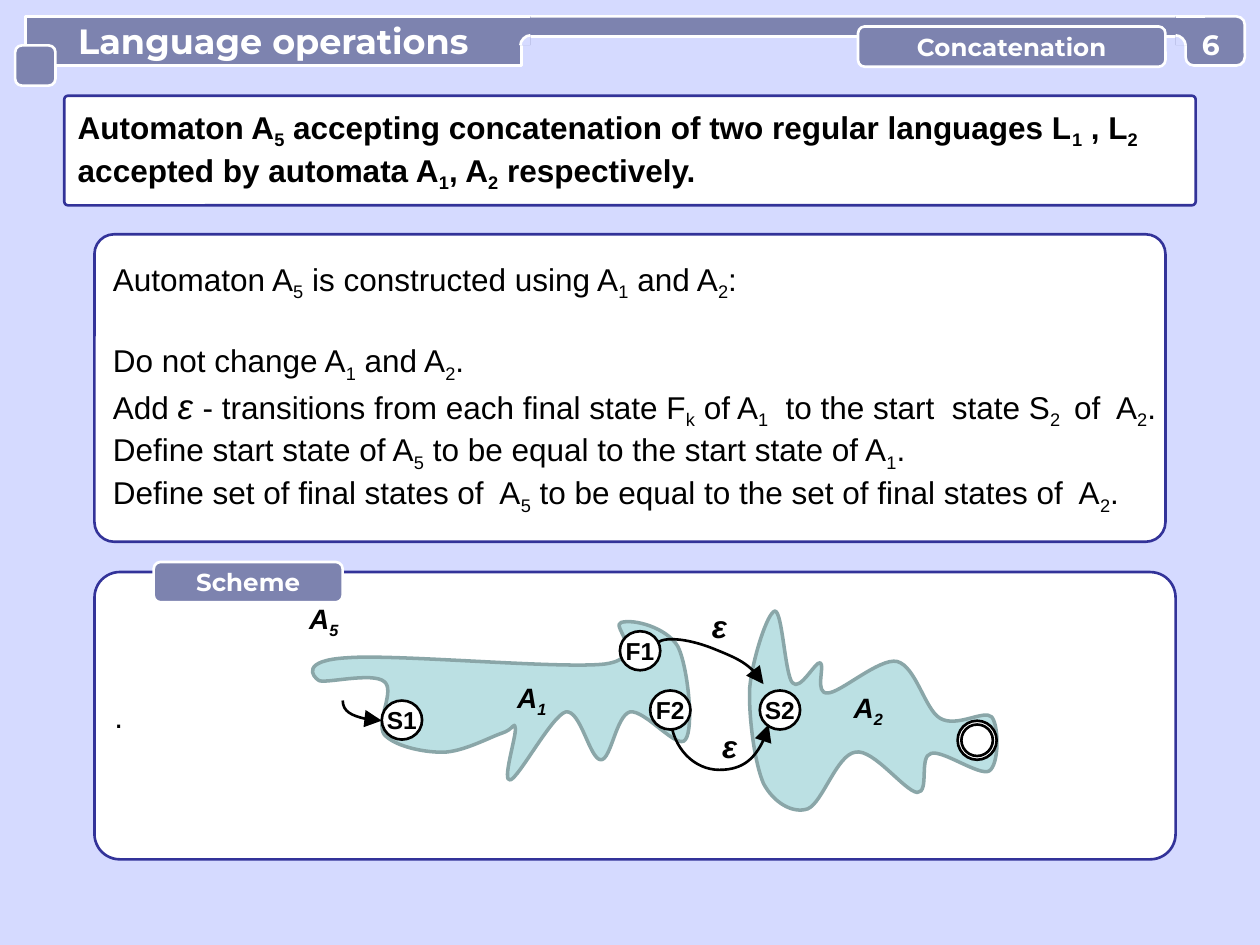
"""Builds a slide on the automaton that accepts a concatenation of two languages."""
from copy import deepcopy
from lxml import etree
from pptx import Presentation
from pptx.dml.color import RGBColor
from pptx.enum.shapes import MSO_CONNECTOR, MSO_SHAPE
from pptx.enum.text import MSO_ANCHOR, MSO_AUTO_SIZE, PP_ALIGN
from pptx.oxml.ns import qn
from pptx.util import Inches, Pt

RECTANGLE, ROUNDED, OVAL = MSO_SHAPE.RECTANGLE, MSO_SHAPE.ROUNDED_RECTANGLE, MSO_SHAPE.OVAL
LEFT, CENTER = PP_ALIGN.LEFT, PP_ALIGN.CENTER
TOP, MIDDLE = MSO_ANCHOR.TOP, MSO_ANCHOR.MIDDLE
STRAIGHT, NO_AUTOFIT = MSO_CONNECTOR.STRAIGHT, MSO_AUTO_SIZE.NONE
BACKGROUND, WHITE, BLACK = "D5DAFF", "FFFFFF", "000000"
SLATE, NAVY, TEAL, TEAL_EDGE = "7D83AF", "333399", "BBE0E3", "8AA6A8"
color = RGBColor.from_string


def style(shape, fill, line, width=1.5):
    """Sets fill and outline, either of which may be None."""
    shape.shadow.inherit = False
    if fill:
        shape.fill.solid()
        shape.fill.fore_color.rgb = color(fill)
    else:
        shape.fill.background()
    if line:
        shape.line.color.rgb = color(line)
        shape.line.width = Pt(width)
    else:
        shape.line.fill.background()


def write(shape, lines, size, font="Arial", ink=BLACK, bold=True, italic=False,
          align=CENTER, anchor=MIDDLE, inset=0):
    """Writes lines in which every second piece between bars is a subscript or ε."""
    frame = shape.text_frame
    frame.auto_size = NO_AUTOFIT
    frame.word_wrap = False
    frame.vertical_anchor = anchor
    frame.margin_left = frame.margin_right = Inches(inset)
    frame.margin_top = frame.margin_bottom = 0
    for number, line in enumerate(lines):
        paragraph = frame.add_paragraph() if number else frame.paragraphs[0]
        paragraph.alignment = align
        paragraph.space_before = Pt(0)
        for position, piece in enumerate(line.split("|")):
            run = paragraph.add_run()
            run.text = piece
            epsilon = position % 2 and piece.strip() == "ε"
            run.font.name = font
            run.font.size = Pt(20 if epsilon else size)
            run.font.bold = bold
            run.font.italic = bool(italic or epsilon)
            run.font.color.rgb = color(ink)
            if position % 2 and not epsilon:
                run.font._element.set("baseline", "-25000")


presentation = Presentation()
presentation.slide_width, presentation.slide_height = Inches(10), Inches(7.5)
slide = presentation.slides.add_slide(presentation.slide_layouts[1])
slide.background.fill.solid()
slide.background.fill.fore_color.rgb = color(BACKGROUND)
shapes = slide.shapes
title, body = slide.placeholders

frames = [(title, (0.2, 0.13, 3.94, 0.39), 18800, SLATE, WHITE),
          (body, (0.75, 1.86, 8.5, 2.44), 6400, WHITE, NAVY)]
for placeholder, place, rounding, fill, line in frames:
    (placeholder.left, placeholder.top,
     placeholder.width, placeholder.height) = map(Inches, place)
    geometry = etree.Element(qn("a:prstGeom"), prst="roundRect")
    adjustments = etree.SubElement(geometry, qn("a:avLst"))
    etree.SubElement(adjustments, qn("a:gd"), name="adj", fmla=f"val {rounding}")
    placeholder._element.spPr.insert(1, geometry)
    style(placeholder, fill, line)

write(title, ["Language operations"], 20, "Montserrat", WHITE)
write(body, [
    "Automaton A|5| is constructed using A|1| and A|2|:",
    "Do not change A|1| and A|2|.",
    "Add |ε |- transitions from each final state F|k| of A|1|  to the start  state S|2 | of  A|2|.",
    "Define start state of A|5| to be equal to the start state of A|1|.",
    "Define set of final states of  A|5| to be equal to the set of final states of  A|2|.",
], 18, bold=False, align=LEFT, inset=0.1)
for paragraph in body.text_frame.paragraphs:
    properties = paragraph._p.get_or_add_pPr()
    properties.set("marL", "0")
    properties.set("indent", "0")
    etree.SubElement(properties, qn("a:buNone"))
body.text_frame.paragraphs[1].space_before = Pt(22)

boxes = [
    ("scheme panel", 0.75, 4.54, 8.58, 2.28, 0.088, WHITE, NAVY),
    ("statement", 0.51, 0.76, 8.98, 0.87, 0.035, WHITE, NAVY),
    ("header bar", 4.06, 0.13, 5.43, 0.16, 0.5, SLATE, WHITE),
    ("header knob", 0.12, 0.36, 0.32, 0.32, 0.17, SLATE, WHITE),
    ("page tab", 9.41, 0.13, 0.47, 0.39, 0.17, SLATE, WHITE),
    ("topic tab", 6.81, 0.21, 2.44, 0.32, 0.17, SLATE, WHITE),
    ("scheme tab", 1.22, 4.46, 1.5, 0.32, 0.17, SLATE, WHITE),
]
named = {}
for name, left, top, width, height, rounding, fill, line in boxes:
    named[name] = shapes.add_shape(ROUNDED, Inches(left), Inches(top),
                                   Inches(width), Inches(height))
    named[name].adjustments[0] = rounding
    style(named[name], fill, line)

write(named["scheme panel"], ["."], 18, bold=False, align=LEFT, inset=0.1)
write(named["statement"], [
    "Automaton A|5| accepting concatenation of two regular languages L|1| , L|2",
    "accepted by automata A|1|, A|2| respectively.",
], 18, align=LEFT, inset=0.1)
write(named["topic tab"], ["Concatenation"], 14, "Montserrat", WHITE)
write(named["scheme tab"], ["Scheme"], 14, "Montserrat", WHITE)

for left in (3.98, 9.33):
    joint = shapes.add_shape(RECTANGLE, Inches(left), Inches(0.13), Inches(0.23), Inches(0.23))
    style(joint, SLATE, None)
    edge = shapes.add_connector(STRAIGHT, Inches(left), Inches(0.13),
                                Inches(left + 0.23), Inches(0.13))
    edge.line.color.rgb = color(WHITE)
    edge.line.width = Pt(1.5)
    etree.SubElement(edge._element.spPr, qn("a:effectLst"))

left_arc = [(4.21, 0.28), (4.17, 0.28), (4.13, 0.32), (4.13, 0.36)]
right_arc = [(13.54 - x, y) for x, y in left_arc]
first_automaton = [
    (3.98, 5.82), (3.89, 5.85), (3.67, 5.97), (3.51, 5.97), (3.35, 5.97), (3.13, 5.92),
    (3.05, 5.83), (2.98, 5.73), (3.14, 5.48), (3.05, 5.41), (2.96, 5.33), (2.57, 5.43),
    (2.53, 5.4), (2.48, 5.37), (2.38, 5.24), (2.76, 5.22), (3.14, 5.19), (4.44, 5.31),
    (4.8, 5.27), (5.16, 5.22), (4.84, 4.96), (4.93, 4.94), (5.03, 4.91), (5.29, 4.98),
    (5.38, 5.13), (5.46, 5.29), (5.51, 5.78), (5.44, 5.87), (5.38, 5.96), (5.12, 5.63),
    (5, 5.65), (4.89, 5.68), (4.85, 6.03), (4.77, 6.03), (4.68, 6.03), (4.61, 5.63),
    (4.49, 5.65), (4.38, 5.68), (4.12, 6.17), (4.05, 6.19), (3.98, 6.21), (4.1, 5.84),
    (4.09, 5.78), (4.08, 5.72), (4.08, 5.79), (3.98, 5.82)]
second_automaton = [
    (6.57, 5.5), (6.67, 5.5), (6.98, 5.22), (7.12, 5.25), (7.27, 5.29), (7.34, 5.63),
    (7.46, 5.7), (7.59, 5.78), (7.81, 5.63), (7.87, 5.69), (7.93, 5.76), (7.93, 6.07),
    (7.85, 6.12), (7.77, 6.16), (7.48, 5.95), (7.39, 5.98), (7.29, 6), (7.38, 6.29),
    (7.28, 6.29), (7.18, 6.28), (6.93, 5.94), (6.79, 5.97), (6.64, 5.99), (6.53, 6.37),
    (6.41, 6.42), (6.29, 6.46), (6.14, 6.37), (6.06, 6.22), (5.99, 6.06), (5.94, 5.69),
    (5.95, 5.46), (5.97, 5.24), (6.09, 4.86), (6.15, 4.85), (6.21, 4.85), (6.23, 5.36),
    (6.29, 5.42), (6.35, 5.49), (6.47, 5.25), (6.51, 5.26), (6.55, 5.28), (6.46, 5.51),
    (6.57, 5.5)]
upper_transition = [(6.06, 5.43), (6.04, 5.35), (5.89, 5.24), (5.69, 5.16),
                    (5.48, 5.07), (5.28, 5.05), (5.22, 5.1)]
lower_transition = [(6.1, 5.75), (6.06, 5.96), (5.9, 6.11), (5.71, 6.11),
                    (5.51, 6.11), (5.34, 5.94), (5.32, 5.7)]
start_arrow = [(3.03, 5.72), (2.86, 5.72), (2.72, 5.65), (2.72, 5.56)]
curves = [
    (left_arc, BACKGROUND, WHITE, 1.5, (4.21, 0.36)),
    (right_arc, BACKGROUND, WHITE, 1.5, (9.33, 0.36)),
    (first_automaton, TEAL, TEAL_EDGE, 2, None),
    (second_automaton, TEAL, TEAL_EDGE, 2, None),
    (upper_transition, None, BLACK, 1.5, None),
    (lower_transition, None, BLACK, 1.5, None),
    (start_arrow, None, BLACK, 1.5, None),
]
for points, fill, line, width, corner in curves:
    places = [(Inches(x), Inches(y)) for x, y in points]
    builder = shapes.build_freeform(*places[0])
    builder.add_line_segments(places[3::3], close=points[0] == points[-1])
    curve = builder.convert_to_shape()
    style(curve, fill, line, width)
    outline = next(curve._element.iter(qn("a:path")))
    for number, segment in enumerate(outline.findall(qn("a:lnTo"))):
        bezier = etree.Element(qn("a:cubicBezTo"))
        for x, y in places[3 * number + 1:3 * number + 4]:
            etree.SubElement(bezier, qn("a:pt"), x=str(x - curve.left), y=str(y - curve.top))
        outline.replace(segment, bezier)
    if corner:
        area = deepcopy(outline)
        outline.set("fill", "none")
        area.set("stroke", "0")
        side = etree.SubElement(area, qn("a:lnTo"))
        etree.SubElement(side, qn("a:pt"), x=str(Inches(corner[0]) - curve.left),
                         y=str(Inches(corner[1]) - curve.top))
        etree.SubElement(area, qn("a:close"))
        outline.addnext(area)
    if line == BLACK:
        etree.SubElement(curve.line._get_or_add_ln(), qn("a:headEnd"),
                         type="triangle", w="lg", len="lg")

states = [("S2", 6.03, 5.48, 0.32), ("S1", 3.03, 5.56, 0.32), ("F1", 4.92, 5.01, 0.32),
          ("F2", 5.16, 5.48, 0.32), ("", 7.6, 5.72, 0.31), ("", 7.63, 5.75, 0.25)]
for name, left, top, size in states:
    state = shapes.add_shape(OVAL, Inches(left), Inches(top), Inches(size), Inches(min(size, 0.31)))
    style(state, WHITE, BLACK)
    if name:
        write(state, [name], 14)

labels = [("A|1", 4.06, 5.4, 16), ("A|2", 6.73, 5.48, 16), ("A|5", 2.41, 4.77, 16),
          ("ε", 5.55, 4.82, 18), ("ε", 5.63, 5.77, 18)]
for text, left, top, size in labels:
    label = shapes.add_textbox(Inches(left), Inches(top), Inches(0.32), Inches(0.32))
    write(label, [text], size, italic=True, anchor=TOP)

page_number = shapes.add_textbox(Inches(9.41), Inches(0.22), Inches(0.4), Inches(0.27))
write(page_number, ["6"], 16, "Montserrat", WHITE)

presentation.save("out.pptx")
